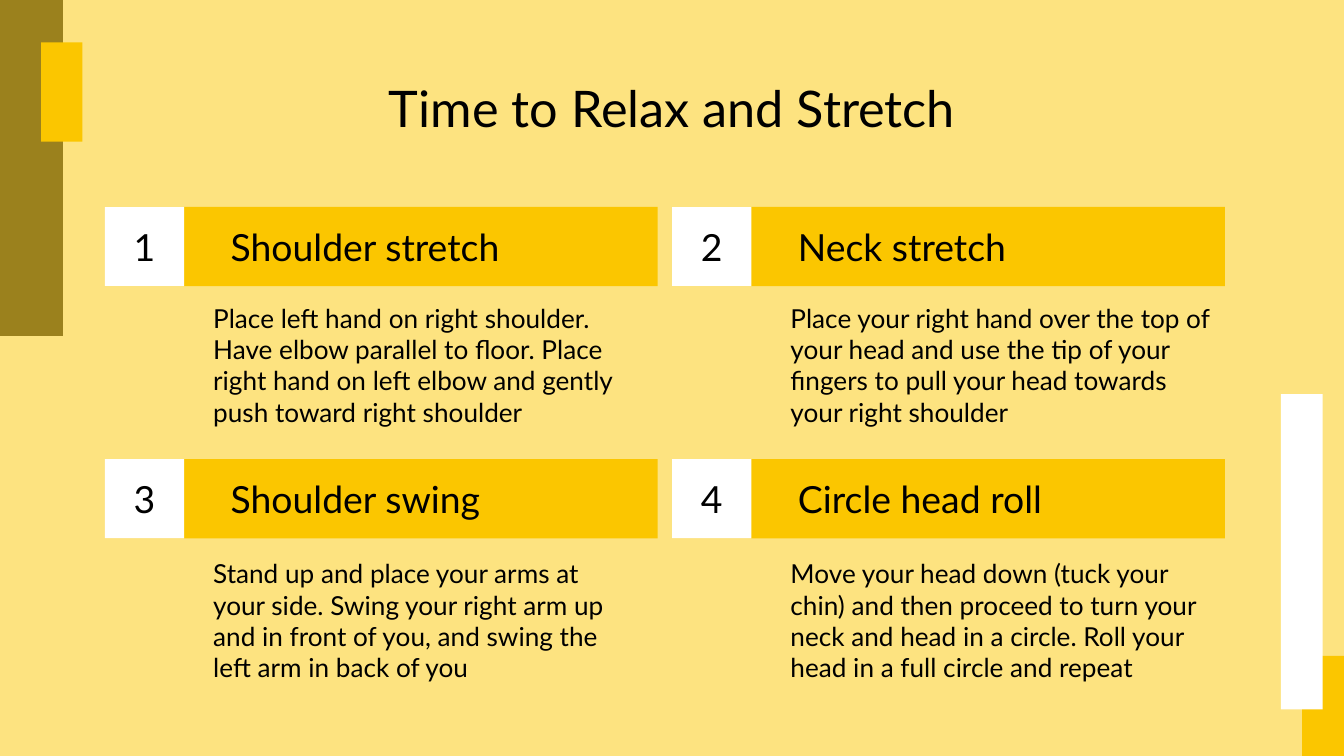
import dataclasses

import pptx
import pptx.dml.color
import pptx.enum.shapes
import pptx.enum.text
import pptx.util
from pptx.util import Cm


@dataclasses.dataclass(frozen=True)
class Theme:
    background: str = "FDE380"
    olive: str = "9B811D"
    gold: str = "FBC600"
    white: str = "FFFFFF"
    text: str = "000000"
    font: str = "Lato"
    title_size: int = 27
    heading_size: int = 20
    body_size: int = 14
    inset: float = 0.25


class SlideBuilder:
    """Holds the theme and the current slide; lengths are in centimetres."""

    def __init__(self, slide, theme):
        self.slide = slide
        self.theme = theme

    def background(self, color):
        fill = self.slide.background.fill
        fill.solid()
        fill.fore_color.rgb = pptx.dml.color.RGBColor.from_string(color)

    def block(self, left, top, width, height, color):
        shape = self.slide.shapes.add_shape(
            pptx.enum.shapes.MSO_SHAPE.RECTANGLE,
            Cm(left), Cm(top), Cm(width), Cm(height))
        shape.shadow.inherit = False
        shape.fill.solid()
        shape.fill.fore_color.rgb = pptx.dml.color.RGBColor.from_string(color)
        shape.line.fill.background()

    def text(self, left, top, width, height, words, size, centered=False):
        box = self.slide.shapes.add_textbox(
            Cm(left), Cm(top), Cm(width), Cm(height))
        frame = box.text_frame
        frame.word_wrap = True
        frame.vertical_anchor = pptx.enum.text.MSO_ANCHOR.MIDDLE
        frame.margin_left = frame.margin_right = Cm(self.theme.inset)
        frame.margin_top = frame.margin_bottom = Cm(self.theme.inset)
        paragraph = frame.paragraphs[0]
        alignment = pptx.enum.text.PP_ALIGN
        paragraph.alignment = alignment.CENTER if centered else alignment.LEFT
        run = paragraph.add_run()
        run.text = words
        run.font.name = self.theme.font
        run.font.size = pptx.util.Pt(size)
        run.font.color.rgb = pptx.dml.color.RGBColor.from_string(self.theme.text)

    def exercise(self, index, heading, instructions):
        """Numbered heading bar with its instructions, in a two-column grid."""
        row, column = divmod(index, 2)
        left = 1.98 + column * 10.72
        top = 3.91 + row * 4.77
        heading_size = self.theme.heading_size
        self.block(left, top, 10.45, 1.5, self.theme.gold)
        self.block(left, top, 1.5, 1.5, self.theme.white)
        self.text(left + 0.28, top + 0.13, 0.94, 1.24,
                  str(index + 1), heading_size, centered=True)
        self.text(left + 2.13, top + 0.13, 8.33, 1.24, heading, heading_size)
        self.text(3.78 + column * 10.91, 5.41 + row * 4.83, 8.48, 2.97,
                  instructions, self.theme.body_size)


EXERCISES = [
    ("Shoulder stretch",
     "Place left hand on right shoulder. Have elbow parallel to floor. "
     "Place right hand on left elbow and gently push toward right shoulder"),
    ("Neck stretch",
     "Place your right hand over the top of your head and use the tip of "
     "your fingers to pull your head towards your right shoulder"),
    ("Shoulder swing",
     "Stand up and place your arms at your side. Swing your right arm up "
     "and in front of you, and swing the left arm in back of you"),
    ("Circle head roll",
     "Move your head down (tuck your chin) and then proceed to turn your "
     "neck and head in a circle. Roll your head in a full circle and repeat"),
]


def main():
    presentation = pptx.Presentation()
    presentation.slide_width = Cm(25.4)
    presentation.slide_height = Cm(14.29)
    slide = presentation.slides.add_slide(presentation.slide_layouts[6])
    theme = Theme()
    builder = SlideBuilder(slide, theme)

    # Background and edge decoration
    builder.background(theme.background)
    builder.block(0, 0, 1.19, 6.35, theme.olive)
    builder.block(0.78, 0.8, 0.78, 1.88, theme.gold)
    builder.block(24.61, 12.4, 0.79, 1.89, theme.gold)
    builder.block(24.21, 7.45, 0.79, 5.96, theme.white)

    # Title
    builder.text(1.98, 1.5, 21.44, 1.07, "Time to Relax and Stretch",
                 theme.title_size, centered=True)

    # Exercises
    for index, (heading, instructions) in enumerate(EXERCISES):
        builder.exercise(index, heading, instructions)

    presentation.save("out.pptx")


if __name__ == "__main__":
    main()
